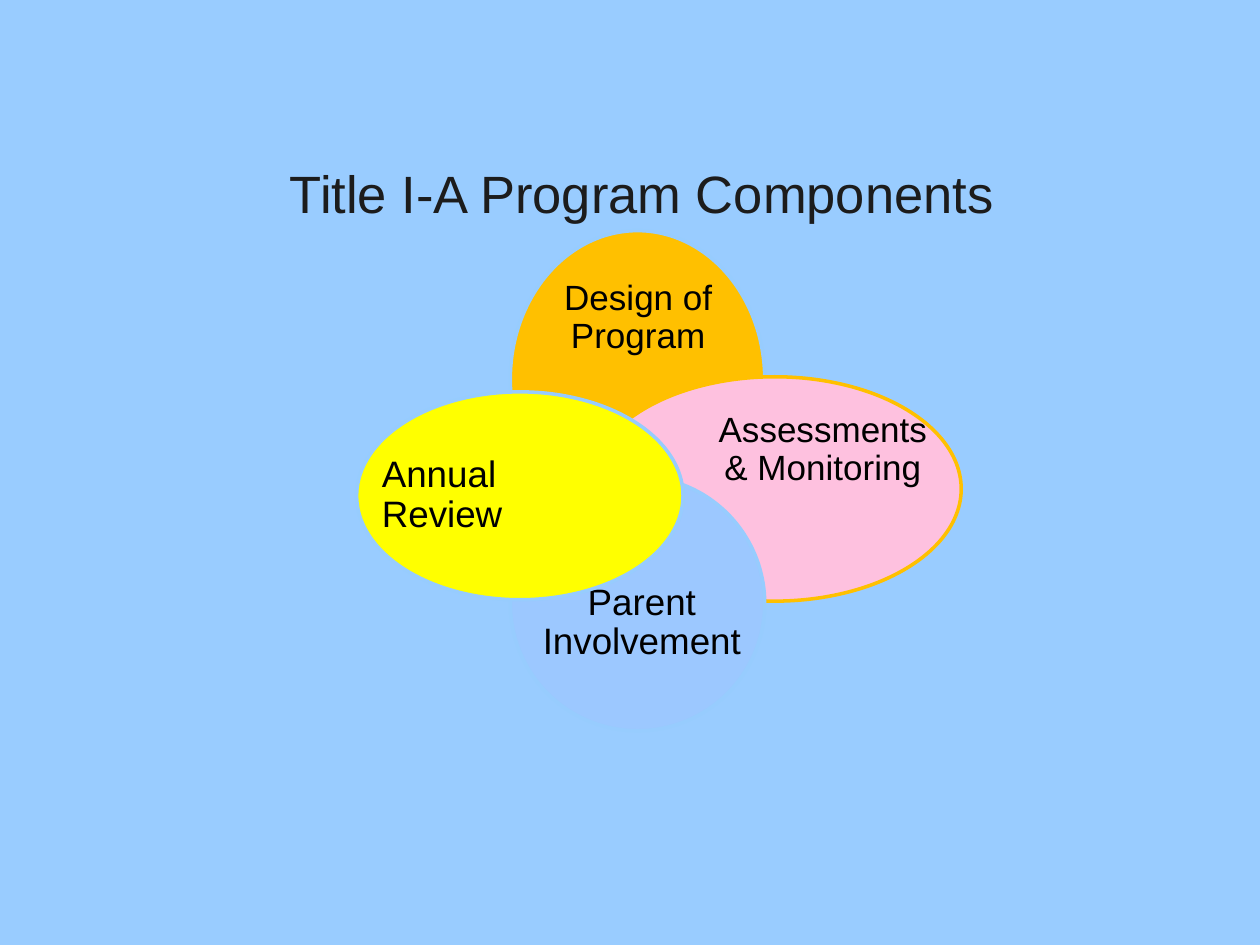
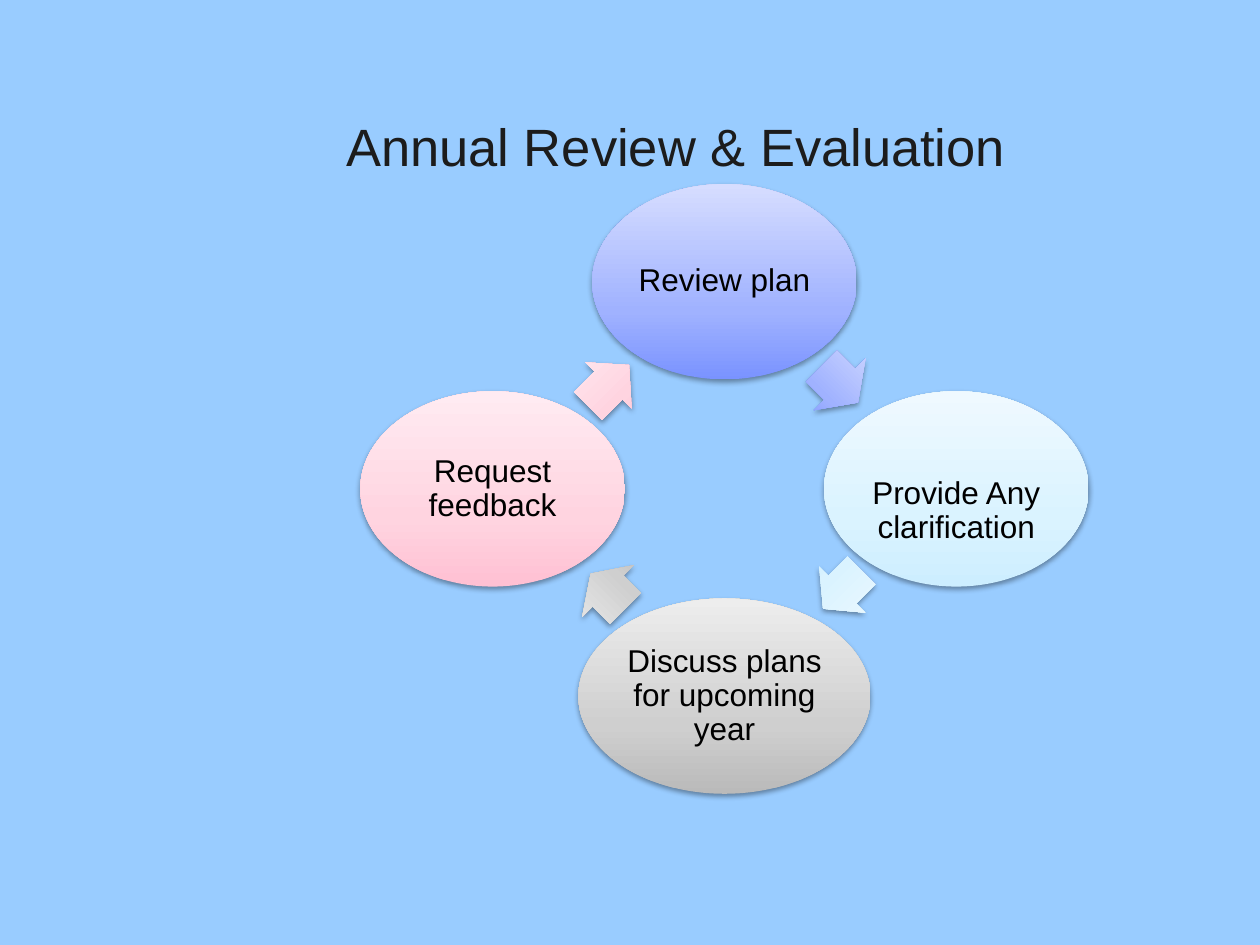
import math

import lxml.etree
import pptx
import pptx.dml.color
import pptx.enum.shapes
import pptx.enum.text
import pptx.oxml.ns
import pptx.util

Pt = pptx.util.Pt
qn = pptx.oxml.ns.qn
SHAPE = pptx.enum.shapes.MSO_SHAPE
ALIGN = pptx.enum.text.PP_ALIGN

COLORS = {
    "sky": "99CCFF", "title": "1C1C1C", "text": "000000", "outline": "97CCFE",
    "gold": "FFC000", "pink": "FEC1DF", "blue": "9CC8FF", "yellow": "FFFF00",
}
GRADIENTS = {
    "violet": ("7A93FF", "A0B2FF", "D6DDFF"),
    "ice": ("CDEEFF", "DAF3FF", "EFF9FF"),
    "gray": ("BABABA", "CFCFCF", "EDEDED"),
    "rose": ("FFC0D3", "FFD4E0", "FFEBF2"),
}
STOPS = (0, 35, 100)

PETALS = [
    ("Design of Program", "gold", "outline", (291.6, 131.8, 145.4, 169.9),
     (308.9, 154.8, 111.6, 54), 20, ALIGN.CENTER),
    ("Assessments & Monitoring", "pink", "gold", (336.2, 215.3, 213.1, 128.2),
     (406.1, 208.1, 128.2, 98.6), 20, ALIGN.CENTER),
    ("Parent Involvement", "blue", "outline", (291.6, 272.2, 145.4, 145.4),
     (299.5, 329, 134.6, 54), 21, ALIGN.CENTER),
    ("Annual Review", "yellow", "outline", (203.8, 223.9, 186.5, 118.8),
     (218.2, 237.6, 72, 91.4), 21, ALIGN.JUSTIFY),
]

RING_CENTER, RING_RADII = (414, 279.4), (132.5, 118.4)
STEP_HEIGHT = 111.6
STEPS = [
    ("Review plan", "violet", 151.2, 0, (465.1, 198.7, 29.5, 41.8)),
    ("Provide Any clarification", "ice", 151.2, 12.5, (465.8, 318.2, 31, 37.4)),
    ("Discuss plans for upcoming year", "gray", 167, 0, (333.4, 316.8, 28.1, 41.8)),
    ("Request feedback", "rose", 151.2, 0, (331.2, 201.6, 33.1, 37.4)),
]


def rgb(name):
    return pptx.dml.color.RGBColor.from_string(COLORS[name])


class Deck:
    """Holds the shared style and the slide being built."""

    def __init__(self):
        self.prs = pptx.Presentation()
        self.prs.slide_width, self.prs.slide_height = Pt(720), Pt(540)
        fill = self.prs.slide_master.background.fill
        fill.solid()
        fill.fore_color.rgb = rgb("sky")

    def slide(self, title, left, top):
        self.s = self.prs.slides.add_slide(self.prs.slide_layouts[5])
        sp = self.s.shapes.title
        sp.left, sp.top, sp.width, sp.height = map(Pt, (left, top, 481.7, 58.3))
        self.set_text(sp, title, 30, "title")

    def set_text(self, sp, text, size, color="text", align=ALIGN.CENTER):
        tf = sp.text_frame
        tf.word_wrap = True
        tf.vertical_anchor = pptx.enum.text.MSO_ANCHOR.MIDDLE
        p = tf.paragraphs[0]
        p.text = text
        p.alignment = align
        p.font.name, p.font.size = "Arial", Pt(size)
        p.font.color.rgb = rgb(color)
        return p

    def label(self, text, box, size, inset=0, align=ALIGN.CENTER):
        sp = self.s.shapes.add_textbox(*map(Pt, box))
        tf = sp.text_frame
        tf.margin_left = tf.margin_right = tf.margin_top = tf.margin_bottom = Pt(inset)
        self.set_text(sp, text, size, align=align).line_spacing = 0.9

    def shape(self, kind, box):
        sp = self.s.shapes.add_shape(kind, *map(Pt, box))
        sp.shadow.inherit = False
        return sp

    def flat_oval(self, box, fill, line):
        sp = self.shape(SHAPE.OVAL, box)
        sp.fill.solid()
        sp.fill.fore_color.rgb = rgb(fill)
        sp.line.color.rgb = rgb(line)
        sp.line.width = Pt(2)

    def shaded(self, kind, box, gradient):
        sp = self.shape(kind, box)
        sp.line.fill.background()
        sp.fill.gradient()
        sp.fill.gradient_angle = 90
        sub = lxml.etree.SubElement
        spPr = sp.element.spPr
        stops = spPr.find(".//" + qn("a:gsLst"))
        for gs in list(stops):
            stops.remove(gs)
        for pos, color in zip(STOPS, GRADIENTS[gradient]):
            gs = sub(stops, qn("a:gs"), pos=str(pos * 1000))
            sub(gs, qn("a:srgbClr"), val=color)
        shadow = sub(spPr.find(qn("a:effectLst")), qn("a:outerShdw"),
                     blurRad=str(Pt(3.1)), dist=str(Pt(1.6)),
                     dir="5400000", rotWithShape="0")
        color = sub(shadow, qn("a:srgbClr"), val=COLORS["text"])
        sub(color, qn("a:alpha"), val="36000")
        return sp

    def arrow(self, box, gradient, rotation):
        sp = self.shaded(SHAPE.RIGHT_ARROW, box, gradient)
        sp.adjustments[0], sp.adjustments[1] = 0.6, 0.5
        sp.rotation = rotation


def centered(x, y, w, h):
    return x - w / 2, y - h / 2, w, h


def main():
    deck = Deck()

    deck.slide("Title I-A Program Components", 126, 80.6)
    for text, fill, line, oval, label, size, align in PETALS:
        deck.flat_oval(oval, fill, line)
        deck.label(text, label, size, align=align)

    deck.slide("Annual Review & Evaluation", 145.4, 54)
    inner = math.sqrt(0.5)
    for i, (text, gradient, width, drop, arrow) in enumerate(STEPS):
        angle = i * math.pi / 2
        x = RING_CENTER[0] + RING_RADII[0] * math.sin(angle)
        y = RING_CENTER[1] - RING_RADII[1] * math.cos(angle)
        deck.shaded(SHAPE.OVAL, centered(x, y, width, STEP_HEIGHT), gradient)
        deck.label(text, centered(x, y + drop, width * inner, STEP_HEIGHT * inner), 18, 1.6)
        deck.arrow(arrow, gradient, 45 + 90 * i)

    deck.prs.save("out.pptx")


if __name__ == "__main__":
    main()
